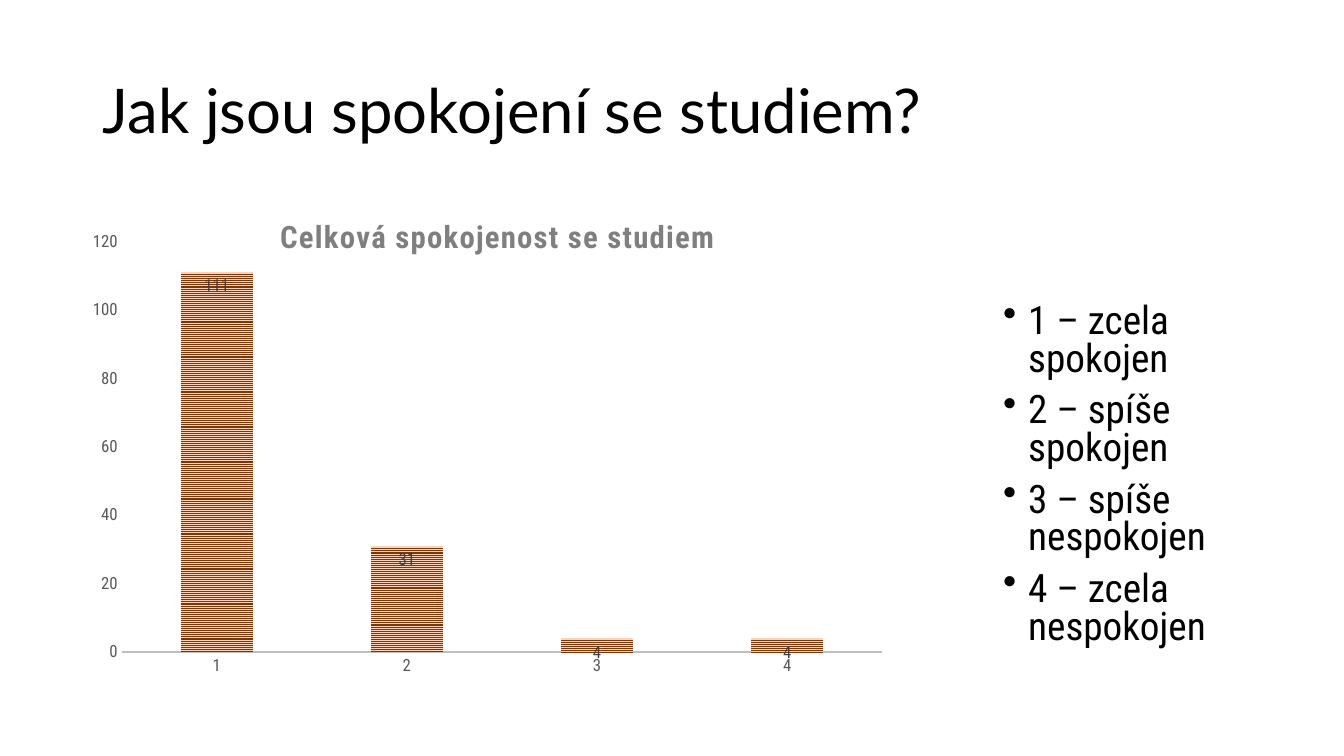
"""Build a slide with a column chart of satisfaction with studies and its key."""
from lxml import etree
from pptx import Presentation, util as u
from pptx.chart.data import CategoryChartData
from pptx.dml.color import RGBColor
from pptx.enum import chart as charts, dml, text
from pptx.oxml import parse_xml
from pptx.oxml.ns import nsdecls, qn

WIDTH, HEIGHT = 13.33, 7.5
HEADING = "Jak jsou spokojení se studiem?"
CHART_TITLE = "Celková spokojenost se studiem"
ANSWERS = {"1": 111, "2": 31, "3": 4, "4": 4}
KEY = ["1 – zcela spokojen", "2 – spíše spokojen",
       "3 – spíše nespokojen", "4 – zcela nespokojen"]
FONT, HEADING_FONT = "Roboto Condensed", "Lato"
MARGIN, CONTENT_TOP, CONTENT_BOTTOM = 0.92, 1.85, 6.76
KEY_LEFT, KEY_TOP = 9.85, 2.97
RIGHT = WIDTH - MARGIN
PLOT_LAYOUT = {"layoutTarget": "inner", "xMode": "edge", "yMode": "edge",
               "x": 0.035, "y": 0.111, "w": 0.92, "h": 0.83}
TITLE_LAYOUT = {"xMode": "edge", "yMode": "edge", "x": 0.22, "y": 0.05}


def color(value):
    return RGBColor.from_string(value)


def style(font, size, fill, name=FONT, bold=False):
    font.size, font.name, font.bold = u.Pt(size), name, bold
    font.color.rgb = color(fill)


def add_text(slide, lines, box, size, name=FONT, spacing=1.0, before=0,
             anchor=text.MSO_ANCHOR.TOP, bullet=None):
    left, top, right, bottom = map(u.Inches, box)
    shape = slide.shapes.add_textbox(left, top, right - left, bottom - top)
    frame = shape.text_frame
    frame.word_wrap, frame.vertical_anchor = True, anchor
    for index, line in enumerate(lines):
        paragraph = frame.add_paragraph() if index else frame.paragraphs[0]
        paragraph.line_spacing = spacing
        paragraph.space_before = u.Pt(before if index else 0)
        if bullet:
            properties = paragraph._p.get_or_add_pPr()
            properties.set("marL", str(u.Inches(0.25)))
            properties.set("indent", str(-u.Inches(0.25)))
            properties.append(parse_xml(f'<a:buChar {nsdecls("a")} char="{bullet}"/>'))
        run = paragraph.add_run()
        run.text = line
        style(run.font, size, "000000", name)


def set_layout(parent, index, values):
    for old in parent.findall(qn("c:layout")):
        parent.remove(old)
    layout = etree.Element(qn("c:layout"))
    manual = etree.SubElement(layout, qn("c:manualLayout"))
    for key, value in values.items():
        etree.SubElement(manual, qn(f"c:{key}")).set("val", str(value))
    parent.insert(index, layout)


def format_axis(axis):
    axis.has_major_gridlines = False
    axis.major_tick_mark = axis.minor_tick_mark = charts.XL_TICK_MARK.NONE
    style(axis.tick_labels.font, 12, "595959")


def add_satisfaction_chart(slide):
    data = CategoryChartData()
    data.categories = list(ANSWERS)
    data.add_series("Series 1", list(ANSWERS.values()))
    chart = slide.shapes.add_chart(
        charts.XL_CHART_TYPE.COLUMN_CLUSTERED, u.Inches(MARGIN), u.Inches(CONTENT_TOP),
        u.Inches(8.2), u.Inches(CONTENT_BOTTOM - CONTENT_TOP), data).chart
    style(chart.font, 10, "000000")
    chart.has_legend = False

    chart.has_title = True
    run = chart.chart_title.text_frame.paragraphs[0].add_run()
    run.text = CHART_TITLE
    style(run.font, 22, "7F7F7F", bold=True)
    run.font._element.set("spc", "100")
    set_layout(chart.chart_title._element, 1, TITLE_LAYOUT)
    set_layout(chart._chartSpace.chart.plotArea, 0, PLOT_LAYOUT)

    format_axis(chart.category_axis)
    chart.category_axis.format.line.color.rgb = color("BFBFBF")
    chart.category_axis.format.line.width = u.Pt(1.5)
    format_axis(chart.value_axis)
    chart.value_axis.format.line.fill.background()
    chart.value_axis.minimum_scale, chart.value_axis.maximum_scale = 0, 120
    chart.value_axis.major_unit = 20

    plot = chart.plots[0]
    plot.gap_width, plot.overlap, plot.vary_by_categories = 164, -22, False
    series = plot.series[0]
    series.invert_if_negative = False
    fill = series.format.fill
    fill.patterned()
    fill.pattern = dml.MSO_PATTERN.NARROW_HORIZONTAL
    fill.fore_color.rgb, fill.back_color.rgb = color("773709"), color("FAD3B8")
    series.format.line.fill.background()
    labels = series.data_labels
    labels.show_value = True
    labels.position = charts.XL_LABEL_POSITION.INSIDE_END
    style(labels.font, 12, "404040")


def main():
    presentation = Presentation()
    presentation.slide_width = u.Inches(WIDTH)
    presentation.slide_height = u.Inches(HEIGHT)
    slide = presentation.slides.add_slide(presentation.slide_layouts[6])
    add_text(slide, [HEADING], (MARGIN, 0.4, RIGHT, CONTENT_TOP), 44,
             name=HEADING_FONT, spacing=0.9, anchor=text.MSO_ANCHOR.MIDDLE)
    add_satisfaction_chart(slide)
    add_text(slide, KEY, (KEY_LEFT, KEY_TOP, RIGHT, CONTENT_BOTTOM), 28,
             spacing=0.8, before=10, bullet="•")
    presentation.save("out.pptx")


if __name__ == "__main__":
    main()
